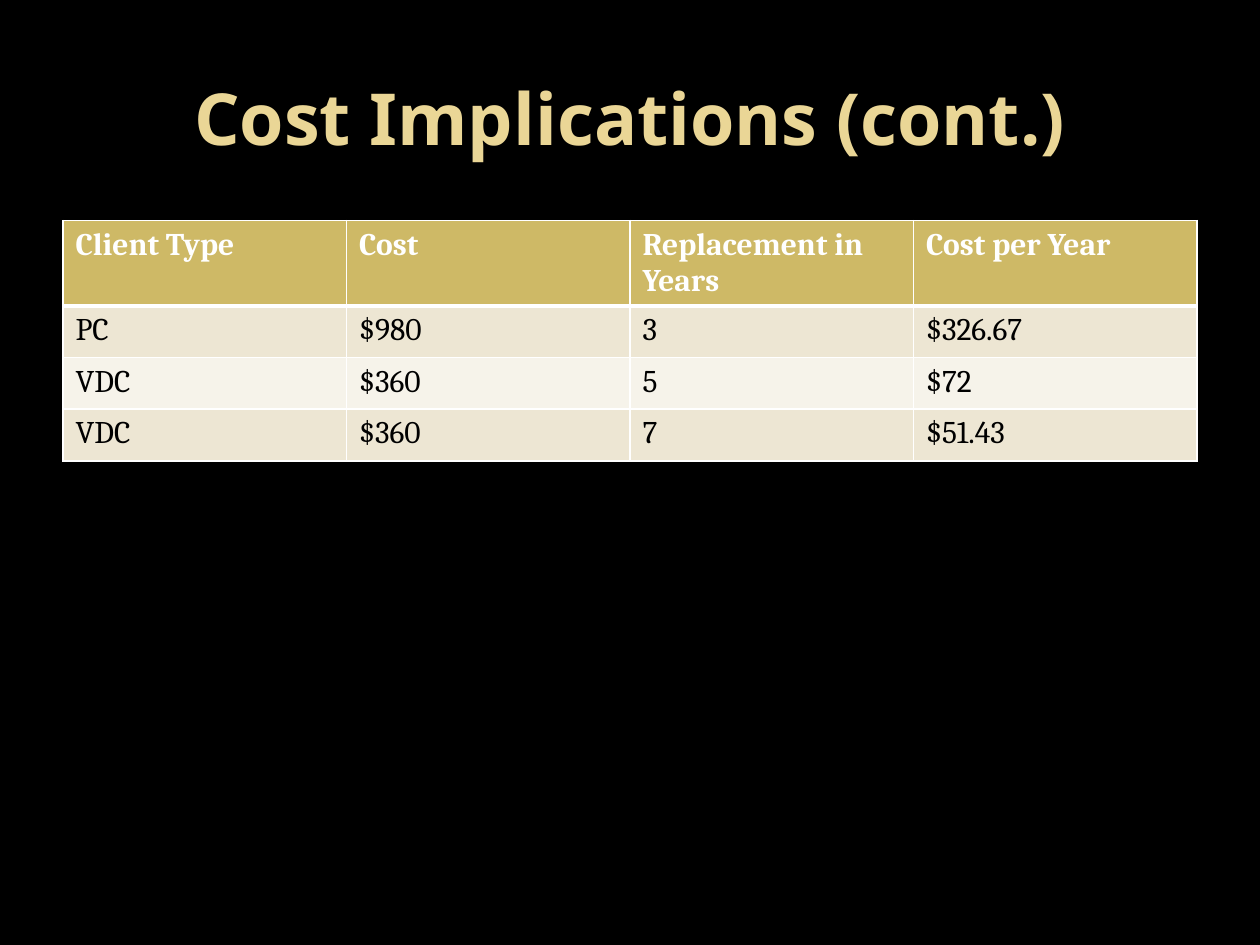
from dataclasses import dataclass

from lxml.etree import SubElement
from pptx import Presentation
from pptx.dml.color import RGBColor
from pptx.enum.text import MSO_ANCHOR, PP_ALIGN
from pptx.oxml.ns import qn
from pptx.util import Inches, Pt


@dataclass(frozen=True)
class Theme:
    background: str = "000000"
    title: str = "EAD696"
    header_fill: str = "CEB966"
    header_text: str = "FFFFFF"
    body_text: str = "000000"
    bands: tuple = ("EDE6D3", "F6F3EA")
    border: str = "FFFFFF"
    title_font: str = "Noto Sans"
    body_font: str = "Cambria"
    title_size: int = 41
    body_size: int = 18
    thin: int = 1
    thick: int = 3


THEME = Theme()
TITLE_BOX = (0.5, 0.3, 9, 1.25)
TABLE_BOX = (0.5, 1.75, 9, 1.64)
COSTS = [
    ("Client Type", "Cost", "Replacement in Years", "Cost per Year"),
    ("PC", "$980", "3", "$326.67"),
    ("VDC", "$360", "5", "$72"),
    ("VDC", "$360", "7", "$51.43"),
]


def style_font(font, name, size, color, bold):
    font.name, font.size, font.bold = name, Pt(size), bold
    font.color.rgb = RGBColor.from_string(color)


def set_borders(cell, widths):
    """Draw the cell's edges; widths maps L, R, T and B, in that order, to points."""
    properties = cell._tc.get_or_add_tcPr()
    for side, width in widths.items():
        line = SubElement(properties, qn(f"a:ln{side}"), w=str(Pt(width)))
        fill = SubElement(line, qn("a:solidFill"))
        SubElement(fill, qn("a:srgbClr"), val=THEME.border)


def place_title(page, box, text):
    title = page.shapes.title
    title.left, title.top, title.width, title.height = map(Inches, box)
    frame = title.text_frame
    frame.text = text
    frame.word_wrap = True
    frame.vertical_anchor = MSO_ANCHOR.MIDDLE
    para = frame.paragraphs[0]
    para.alignment = PP_ALIGN.CENTER
    style_font(para.font, THEME.title_font, THEME.title_size, THEME.title, True)


def place_table(page, box, rows):
    """Fill the box with equal rows and columns; the first row is the header."""
    table = page.shapes.add_table(len(rows), len(rows[0]), *map(Inches, box)).table
    for row_index, row in enumerate(rows):
        is_header = row_index == 0
        fill = THEME.header_fill if is_header else THEME.bands[(row_index - 1) % 2]
        color = THEME.header_text if is_header else THEME.body_text
        widths = {
            "L": THEME.thin,
            "R": THEME.thin,
            "T": THEME.thick if row_index == 1 else THEME.thin,
            "B": THEME.thick if is_header else THEME.thin,
        }
        for column_index, text in enumerate(row):
            cell = table.cell(row_index, column_index)
            cell.text = text
            set_borders(cell, widths)
            cell.fill.solid()
            cell.fill.fore_color.rgb = RGBColor.from_string(fill)
            font = cell.text_frame.paragraphs[0].font
            style_font(font, THEME.body_font, THEME.body_size, color, is_header)


def main():
    deck = Presentation()
    deck.slide_width, deck.slide_height = Inches(10), Inches(7.5)
    page = deck.slides.add_slide(deck.slide_layouts.get_by_name("Title Only"))
    page.background.fill.solid()
    page.background.fill.fore_color.rgb = RGBColor.from_string(THEME.background)
    place_title(page, TITLE_BOX, "Cost Implications (cont.)")
    place_table(page, TABLE_BOX, COSTS)
    deck.save("out.pptx")


if __name__ == "__main__":
    main()
